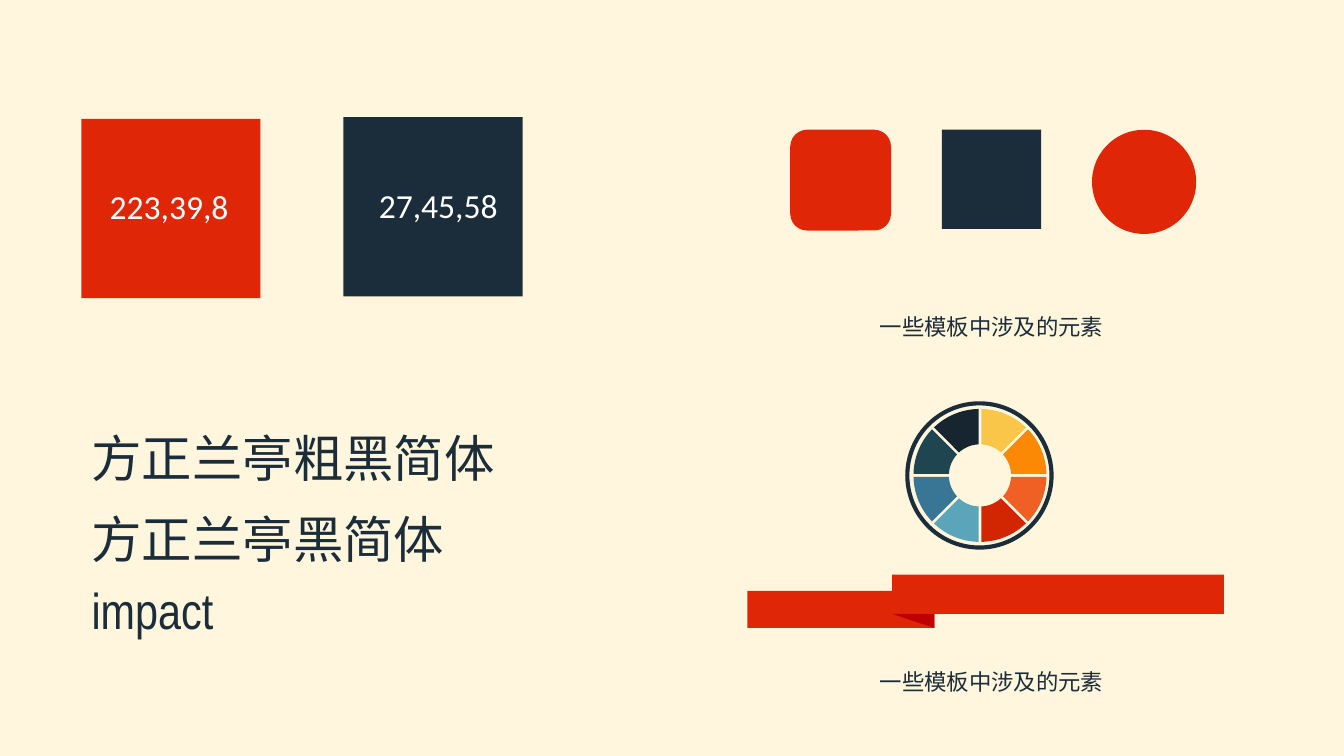
from math import asin, cos, pi, sin

from lxml.etree import SubElement
from pptx import Presentation
from pptx.dml.color import RGBColor
from pptx.enum.shapes import MSO_SHAPE as Preset
from pptx.enum.text import MSO_AUTO_SIZE as AutoSize
from pptx.oxml.ns import qn
from pptx.util import Pt

CREAM, NAVY, RED, WHITE = "FFF6DD", "1B2D3A", "DF2708", "FFFFFF"
DARK_RED = "C00000"
HAN, NARROW, LATIN = "Noto Sans CJK SC", "Arial Narrow", "Calibri"
# Clockwise from twelve o'clock
WHEEL_COLOURS = ["F9C649", "FB8905", "F06025", "D22602",
                 "5AA5B9", "397594", "1E4550", "172531"]


def colour(code):
    return RGBColor.from_string(code)


class Painter:
    """Holds the page and the set of shapes being drawn into."""

    def __init__(self, page, background):
        self.page = page
        self.shapes = page.shapes
        fill = page.background.fill
        fill.solid()
        fill.fore_color.rgb = colour(background)

    def open_group(self):
        self.shapes = self.page.shapes.add_group_shape().shapes

    def close_group(self):
        self.shapes = self.page.shapes

    def paint(self, shape, code):
        shape.shadow.inherit = False
        shape.fill.solid()
        shape.fill.fore_color.rgb = colour(code)
        shape.line.fill.background()
        return shape

    def preset(self, kind, left, top, width, height, code):
        shape = self.shapes.add_shape(
            kind, Pt(left), Pt(top), Pt(width), Pt(height))
        return self.paint(shape, code)

    def outline(self, points, code):
        corners = [(Pt(x), Pt(y)) for x, y in points]
        builder = self.shapes.build_freeform(*corners[0])
        builder.add_line_segments(corners[1:], close=True)
        return self.paint(builder.convert_to_shape(), code)

    def text(self, words, left, top, width, height, size, font, code=NAVY):
        box = self.shapes.add_textbox(
            Pt(left), Pt(top), Pt(width), Pt(height))
        frame = box.text_frame
        frame.word_wrap = False
        frame.auto_size = AutoSize.SHAPE_TO_FIT_TEXT
        para = frame.paragraphs[0]
        span = para.add_run()
        span.text = words
        span.font.size = Pt(size)
        span.font.name = font
        span.font.color.rgb = colour(code)
        # East Asian typeface
        SubElement(span.font._element, qn("a:ea")).set("typeface", font)

    def wheel(self, x, y, outer, inner, half_gap, codes, steps=12):
        """Ring of equal segments parted by gaps of constant width."""
        sweep = 2 * pi / len(codes)

        def arc(radius, start):
            trim = asin(half_gap / radius)
            first, span = start + trim, sweep - 2 * trim
            angles = [first + span * step / steps for step in range(steps + 1)]
            return [(x + radius * sin(a), y - radius * cos(a)) for a in angles]

        for index, code in enumerate(codes):
            start = index * sweep
            self.outline(arc(outer, start) + arc(inner, start)[::-1], code)


def main():
    deck = Presentation()
    deck.slide_width, deck.slide_height = Pt(960), Pt(540)
    painter = Painter(deck.slides.add_slide(deck.slide_layouts[6]), CREAM)

    # Font samples
    for words, top, width, font in [
            ("方正兰亭粗黑简体", 301.7, 305.3, HAN),
            ("方正兰亭黑简体", 359.3, 269.3, HAN),
            ("impact", 410.4, 118, NARROW)]:
        painter.text(words, 58.3, top, width, 51, 36, font)

    # Colour swatches with their RGB values
    for words, left, top, text_left, code in [
            ("223,39,8", 58.1, 85, 71.3, RED),
            ("27,45,58", 245.3, 83.7, 263.5, NAVY)]:
        painter.preset(Preset.RECTANGLE, left, top, 128, 128, code)
        painter.text(words, text_left, top + 44.6, 100, 36, 24, LATIN, WHITE)

    # Basic shapes
    for kind, left, size, code in [
            (Preset.ROUNDED_RECTANGLE, 564.5, 72, RED),
            (Preset.RECTANGLE, 672.9, 70.8, NAVY),
            (Preset.OVAL, 780, 74.4, RED)]:
        painter.preset(kind, left, 92.7, size, size, code)

    # Colour wheel
    painter.open_group()
    ring = painter.preset(Preset.DONUT, 646.6, 286.6, 106, 106, NAVY)
    ring.adjustments[0] = 0.028
    painter.wheel(700, 339.6, 47.5, 22.2, 1, WHEEL_COLOURS)
    painter.close_group()

    # Folded ribbon
    painter.open_group()
    painter.preset(Preset.RECTANGLE, 533.9, 422, 133.5, 26.6, RED)
    painter.preset(Preset.RECTANGLE, 637.2, 410.5, 237, 28, RED)
    painter.outline([(667.4, 438.5), (637.2, 438.5), (667.4, 448.6)], DARK_RED)
    painter.close_group()

    # Captions
    for top in (220.3, 473.8):
        painter.text("一些模板中涉及的元素", 621.4, top, 175.7, 26.6, 16, HAN)

    deck.save("out.pptx")


if __name__ == "__main__":
    main()
